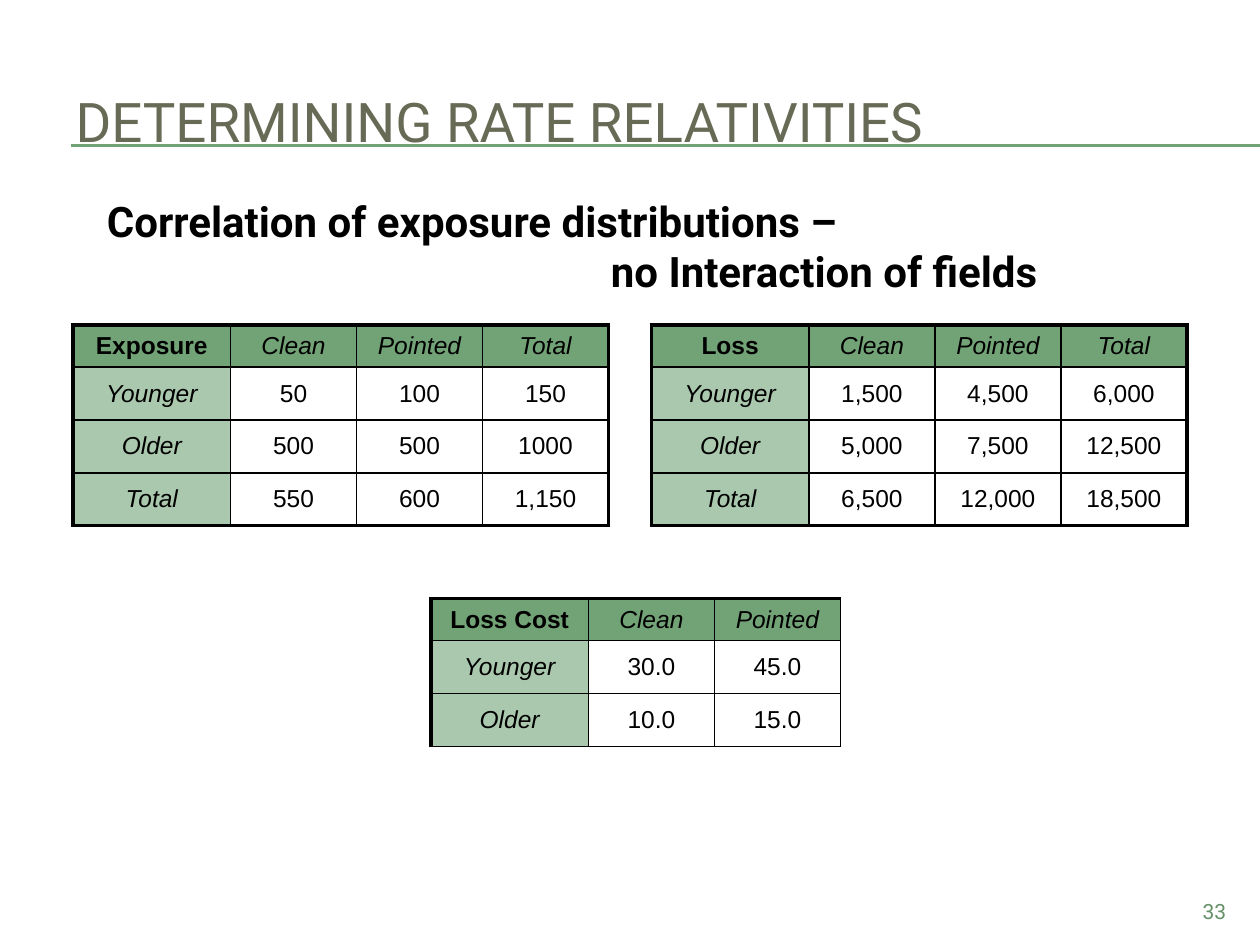
import pptx
import pptx.dml.color
import pptx.enum.shapes
import pptx.enum.text
import pptx.oxml.ns
import pptx.util
from lxml import etree

Inches = pptx.util.Inches
RGBColor = pptx.dml.color.RGBColor
ALIGN = pptx.enum.text.PP_ALIGN
ANCHOR = pptx.enum.text.MSO_ANCHOR
qn = pptx.oxml.ns.qn

BLACK = RGBColor(0x00, 0x00, 0x00)
GREEN = RGBColor(0x72, 0xA3, 0x76)
PALE_GREEN = RGBColor(0xAA, 0xC8, 0xAD)
DARK_GREEN = RGBColor(0x65, 0x90, 0x68)
OLIVE = RGBColor(0x67, 0x6A, 0x55)

THIN, THICK = 1, 2.25


def write(paragraph, text, size=14, font="Roboto", color=BLACK, bold=False,
          italic=False, align=ALIGN.LEFT, indent=0):
    paragraph.alignment = align
    if indent:
        properties = paragraph._p.get_or_add_pPr()
        properties.set("marL", str(Inches(indent)))
        properties.set("indent", "0")
    run = paragraph.add_run()
    run.text = text
    run.font.size = pptx.util.Pt(size)
    run.font.name = font
    run.font.color.rgb = color
    run.font.bold = bold
    run.font.italic = italic


def set_borders(cell, **widths):
    properties = cell._tc.get_or_add_tcPr()
    for side in ("L", "R", "T", "B"):
        line = etree.SubElement(properties, qn(f"a:ln{side}"),
                                w=str(pptx.util.Pt(widths[side])))
        fill = etree.SubElement(line, qn("a:solidFill"))
        etree.SubElement(fill, qn("a:srgbClr"), val=str(BLACK))


presentation = pptx.Presentation()
presentation.slide_width = Inches(10)
presentation.slide_height = Inches(7.5)
slide = presentation.slides.add_slide(presentation.slide_layouts[5])

# Double rule under the title
for y in (1.15, 1.16):
    rule = slide.shapes.add_connector(
        pptx.enum.shapes.MSO_CONNECTOR.STRAIGHT,
        Inches(0.56), Inches(y), Inches(10), Inches(y))
    rule.line.color.rgb = GREEN
    rule.line.width = pptx.util.Pt(0.75)
    etree.SubElement(rule._element.spPr, qn("a:effectLst"))

# Title
title = slide.shapes.title
title.left, title.top = Inches(0.5), Inches(0.5)
title.width, title.height = Inches(9.5), Inches(0.92)
title.text_frame.auto_size = pptx.enum.text.MSO_AUTO_SIZE.NONE
title.text_frame.vertical_anchor = ANCHOR.MIDDLE
write(title.text_frame.paragraphs[0], "DETERMINING RATE RELATIVITIES",
      size=31.2, color=OLIVE)

# Subtitle, with its second line indented
subtitle = slide.shapes.add_textbox(Inches(0.75), Inches(1.5), Inches(8), Inches(0.91))
subtitle.text_frame.word_wrap = True
write(subtitle.text_frame.paragraphs[0], "Correlation of exposure distributions –",
      size=24, bold=True)
write(subtitle.text_frame.add_paragraph(), "no Interaction of fields",
      size=24, bold=True, indent=4)

# Slide number
number = slide.shapes.add_textbox(Inches(9), Inches(7.08), Inches(0.83), Inches(0.27))
number.text_frame.word_wrap = True
write(number.text_frame.paragraphs[0], "33", size=12, color=DARK_GREEN,
      align=ALIGN.RIGHT)

# Tables: left, top, width of the right and bottom edges, rows
tables = [
    (0.58, 2.58, THICK, [
        ["Exposure", "Clean", "Pointed", "Total"],
        ["Younger", "50", "100", "150"],
        ["Older", "500", "500", "1000"],
        ["Total", "550", "600", "1,150"]]),
    (5.17, 2.58, THICK, [
        ["Loss", "Clean", "Pointed", "Total"],
        ["Younger", "1,500", "4,500", "6,000"],
        ["Older", "5,000", "7,500", "12,500"],
        ["Total", "6,500", "12,000", "18,500"]]),
    (3.42, 4.75, THIN, [
        ["Loss Cost", "Clean", "Pointed"],
        ["Younger", "30.0", "45.0"],
        ["Older", "10.0", "15.0"]]),
]
for left, top, end_width, rows in tables:
    last_row, last_column = len(rows) - 1, len(rows[0]) - 1
    table = slide.shapes.add_table(
        len(rows), len(rows[0]), Inches(left), Inches(top),
        Inches(1.25 + last_column), Inches(0.33 + 0.42 * last_row)).table
    table.first_row = table.horz_banding = False
    for index, column in enumerate(table.columns):
        column.width = Inches(1 if index else 1.25)
    for index, row in enumerate(table.rows):
        row.height = Inches(0.42 if index else 0.33)

    for r, values in enumerate(rows):
        for c, value in enumerate(values):
            cell = table.cell(r, c)
            cell.vertical_anchor = ANCHOR.MIDDLE
            set_borders(cell,
                        L=THIN if c else THICK,
                        R=end_width if c == last_column else THIN,
                        T=THIN if r else THICK,
                        B=end_width if r == last_row else THIN)
            if r and c:
                cell.fill.background()
            else:
                cell.fill.solid()
                cell.fill.fore_color.rgb = PALE_GREEN if r else GREEN
            write(cell.text_frame.paragraphs[0], value, font="Arial",
                  bold=r == c == 0, italic=(r == 0) != (c == 0),
                  align=ALIGN.CENTER)

presentation.save("out.pptx")
